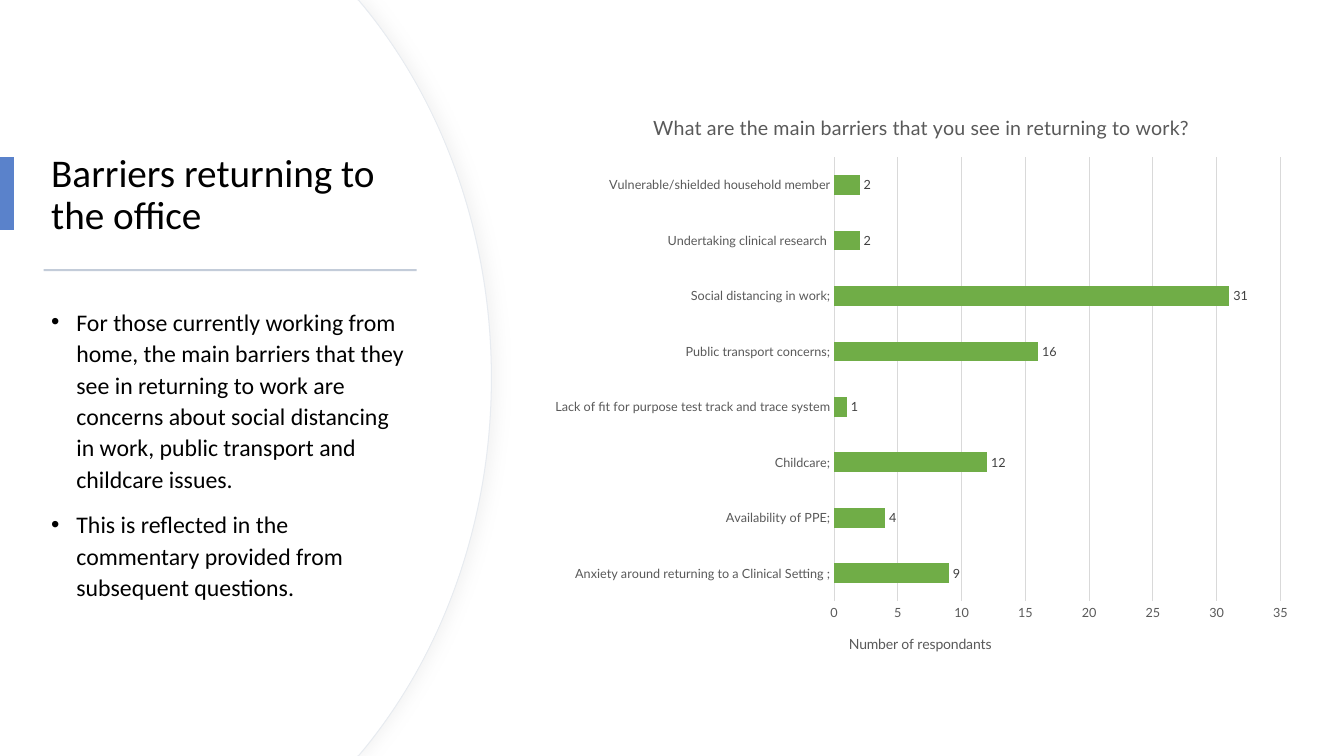
from lxml import etree
from pptx import Presentation
from pptx.chart.data import CategoryChartData
from pptx.dml.color import RGBColor
from pptx.enum.chart import XL_CHART_TYPE, XL_LABEL_POSITION, XL_TICK_MARK
from pptx.enum.shapes import MSO_SHAPE
from pptx.enum.text import MSO_ANCHOR
from pptx.oxml import parse_xml
from pptx.oxml.ns import nsdecls, qn
from pptx.util import Pt

BAR = XL_CHART_TYPE.BAR_CLUSTERED
NO_TICK = XL_TICK_MARK.NONE
OUTSIDE = XL_LABEL_POSITION.OUTSIDE_END
RECT = MSO_SHAPE.RECTANGLE
MIDDLE, TOP = MSO_ANCHOR.MIDDLE, MSO_ANCHOR.TOP

W, H = 960, 540
COLORS = {
    "white": "FFFFFF", "black": "000000", "edge": "E7EBF0", "shadow": "D9D9D9",
    "accent": "5A82CB", "rule": "C3CCD9", "grid": "D9D9D9",
    "bar": "70AD47", "axis": "595959", "label": "404040",
}
BULLETS = [
    "For those currently working from home, the main barriers that they see in "
    "returning to work are concerns about social distancing in work, public "
    "transport and childcare issues.",
    "This is reflected in the commentary provided from subsequent questions.",
]
BARRIERS = {
    "Anxiety around returning to a Clinical Setting ;": 9,
    "Availability of PPE;": 4,
    "Childcare;": 12,
    "Lack of fit for purpose test track and trace system": 1,
    "Public transport concerns;": 16,
    "Social distancing in work;": 31,
    "Undertaking clinical research ": 2,
    "Vulnerable/shielded household member": 2,
}


def rgb(name):
    return RGBColor.from_string(COLORS[name])


def style_font(font, size, color, face):
    font.size, font.name, font.bold = Pt(size), face, False
    font.color.rgb = rgb(color)


def paint(sp, fill, line=None):
    sp.shadow.inherit = False
    sp.fill.solid()
    sp.fill.fore_color.rgb = rgb(fill)
    if line:
        sp.line.color.rgb = rgb(line)
        sp.line.width = Pt(0.75)
    else:
        sp.line.fill.background()


def add_bar(s, x, y, w, h, fill):
    paint(s.shapes.add_shape(RECT, Pt(x), Pt(y), Pt(w), Pt(h)), fill)


def bend(segments):
    """Turn three line segments into one cubic curve."""
    curve = etree.Element(qn("a:cubicBezTo"))
    segments[0].addprevious(curve)
    for segment in segments:
        curve.append(segment[0])
        segment.getparent().remove(segment)


def add_curved_panel(s, right, line=None):
    """White panel whose right side bulges out to the given x."""
    upper = [(right - 95, 0), (right - 90, 6), (right - 34.5, 73.5), (right, 167)]
    lower = [(x, H - y) for x, y in reversed(upper)]
    fb = s.shapes.build_freeform(0, 0, scale=Pt(1))
    fb.add_line_segments([*upper, (right, H / 2), *lower, (0, H)], close=True)
    sp = fb.convert_to_shape()
    segments = list(sp._element.iter(qn("a:lnTo")))
    bend(segments[2:5])
    bend(segments[5:8])
    paint(sp, "white", line)
    return sp


def add_shadow(sp, blur, dist, alpha):
    effects = sp._element.spPr.find(qn("a:effectLst"))
    effects.append(parse_xml(
        f'<a:outerShdw {nsdecls("a")} blurRad="{Pt(blur)}" dist="{Pt(dist)}" dir="0">'
        f'<a:srgbClr val="{COLORS["shadow"]}"><a:alpha val="{alpha * 1000}"/>'
        '</a:srgbClr></a:outerShdw>'))


def set_bullet(p):
    pPr = p._p.get_or_add_pPr()
    pPr.set("marL", str(Pt(18)))
    pPr.set("indent", str(-Pt(18)))
    etree.SubElement(pPr, qn("a:buFont")).set("typeface", "Arial")
    etree.SubElement(pPr, qn("a:buChar")).set("char", "•")


def add_text(s, x, y, w, h, lines, size, spacing, anchor=TOP, before=0, bullet=False):
    tf = s.shapes.add_textbox(Pt(x), Pt(y), Pt(w), Pt(h)).text_frame
    tf.word_wrap = True
    tf.vertical_anchor = anchor
    for i, line in enumerate(lines):
        p = tf.paragraphs[0] if i == 0 else tf.add_paragraph()
        p.line_spacing = spacing
        p.space_before = Pt(before)
        if bullet:
            set_bullet(p)
        r = p.add_run()
        r.text = line
        style_font(r.font, size, "black", "Calibri")


def set_layout(element, index, **place):
    """Fix a chart part at fractions of the chart area, given in percent."""
    old = element.find(qn("c:layout"))
    if old is not None:
        element.remove(old)
    layout = etree.Element(qn("c:layout"))
    manual = etree.SubElement(layout, qn("c:manualLayout"))
    if "w" in place:
        etree.SubElement(manual, qn("c:layoutTarget")).set("val", "inner")
    for key in ("x", "y"):
        etree.SubElement(manual, qn(f"c:{key}Mode")).set("val", "edge")
    for key, value in place.items():
        etree.SubElement(manual, qn(f"c:{key}")).set("val", str(value / 100))
    element.insert(index, layout)


def set_title(title, text, size, x, y):
    r = title.text_frame.paragraphs[0].add_run()
    r.text = text
    style_font(r.font, size, "axis", "Lato")
    set_layout(title._element, 1, x=x, y=y)


def add_barriers_chart(s, x, y, w, h):
    data = CategoryChartData()
    data.categories = list(BARRIERS)
    data.add_series("Series 1", list(BARRIERS.values()))
    chart = s.shapes.add_chart(BAR, Pt(x), Pt(y), Pt(w), Pt(h), data).chart
    chart.has_legend = False
    style_font(chart.font, 10, "black", "Lato")
    chart.has_title = True
    set_title(chart.chart_title,
              "What are the main barriers that you see in returning to work?", 14, 14.3, 2.9)

    # Axes
    cat, val = chart.category_axis, chart.value_axis
    for axis in (cat, val):
        axis.major_tick_mark = axis.minor_tick_mark = NO_TICK
        style_font(axis.tick_labels.font, 9, "axis", "Lato")
    val.minimum_scale, val.maximum_scale, val.major_unit = 0, 35, 5
    val.format.line.fill.background()
    val.has_major_gridlines = True
    for line in (cat.format.line, val.major_gridlines.format.line):
        line.color.rgb = rgb("grid")
        line.width = Pt(0.75)
    set_title(val.axis_title, "Number of respondants", 10, 40.1, 92.7)

    # Bars and their values
    plot = chart.plots[0]
    plot.gap_width = 182
    plot.vary_by_categories = False
    fill = plot.series[0].format.fill
    fill.solid()
    fill.fore_color.rgb = rgb("bar")
    labels = plot.series[0].data_labels
    labels.show_value = True
    labels.position = OUTSIDE
    style_font(labels.font, 9, "label", "Lato")
    plot_area = chart._chartSpace.find(".//" + qn("c:plotArea"))
    set_layout(plot_area, 0, x=38.5, y=11.1, w=58.5, h=76.3)


def main():
    prs = Presentation()
    prs.slide_width, prs.slide_height = Pt(W), Pt(H)
    s = prs.slides.add_slide(prs.slide_layouts[6])

    # Curved panel: outlined edge with a soft shadow, then its white face
    add_shadow(add_curved_panel(s, 350.6, "edge"), blur=10, dist=3, alpha=30)
    add_curved_panel(s, 350)

    # Heading and commentary
    add_text(s, 29.5, 91.5, 271, 97, ["Barriers returning to the office"], 28, 0.9, MIDDLE)
    add_bar(s, 0, 112.3, 10, 52, "accent")
    add_bar(s, 31.2, 192.3, 266.5, 1.44, "rule")
    add_text(s, 29.5, 214, 271, 253, BULLETS, 17, 1.1, before=10, bullet=True)

    # Survey results
    add_barriers_chart(s, 386, 66.25, 545, 415.5)

    prs.save("out.pptx")


if __name__ == "__main__":
    main()
